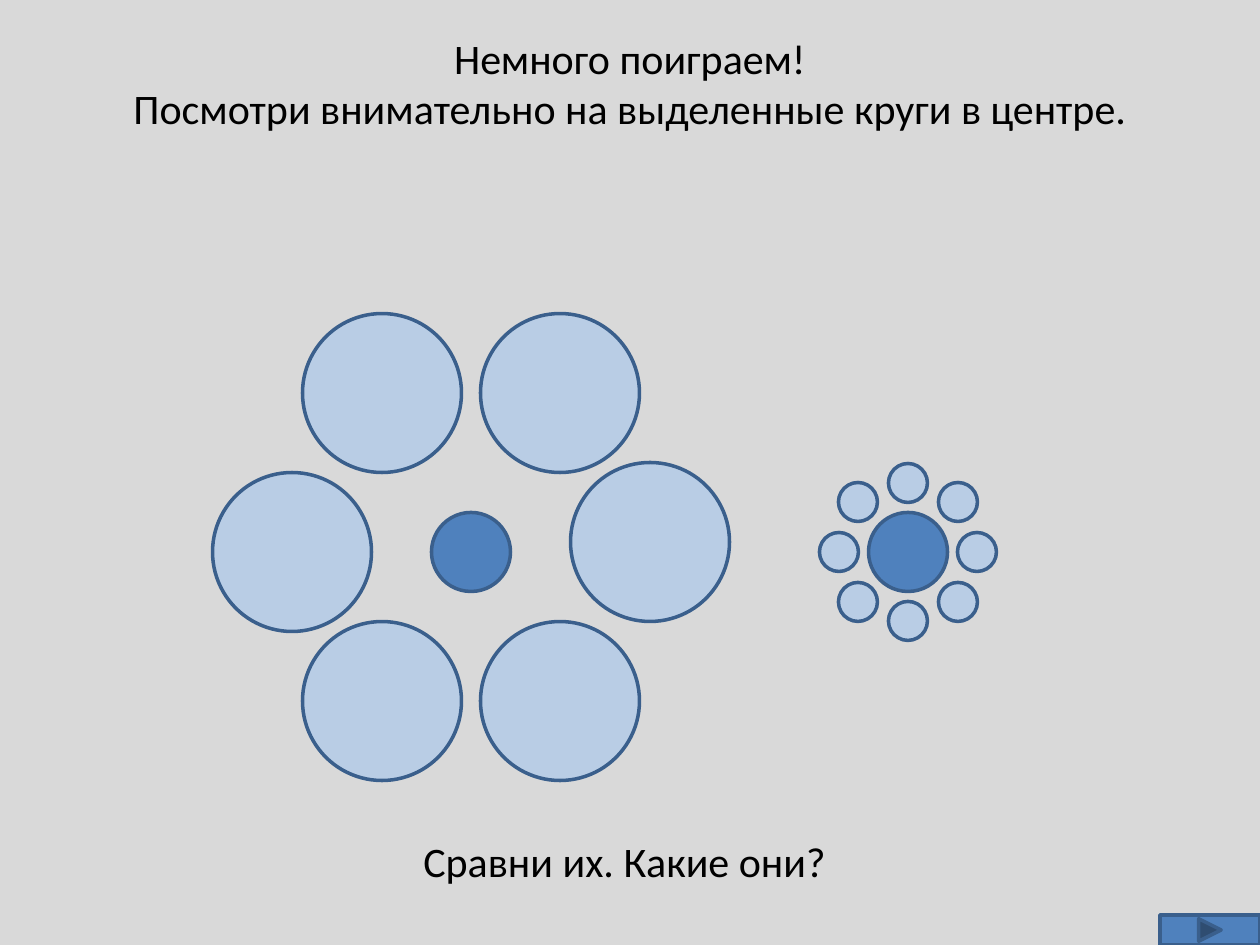
from pptx import Presentation
from pptx.dml.color import RGBColor
from pptx.enum.shapes import MSO_SHAPE
from pptx.enum.text import MSO_AUTO_SIZE, PP_ALIGN
from pptx.util import Pt

PX_PER_INCH = 126
OVAL = MSO_SHAPE.OVAL
NEXT_BUTTON = MSO_SHAPE.ACTION_BUTTON_FORWARD_OR_NEXT
CENTER = PP_ALIGN.CENTER
GROW = MSO_AUTO_SIZE.SHAPE_TO_FIT_TEXT

BACKGROUND = "D9D9D9"
PALE_BLUE = "B9CDE5"
BLUE = "4F81BD"
OUTLINE = "3A5F8C"
BLACK = "000000"

BIG, MIDDLE, SMALL = 159, 79, 39
LEFT_CENTER = (471, 552)
RIGHT_CENTER = (908, 552)
# Offsets of the surrounding circles from the middle of their group
BIG_RING = [(-89, -159), (89, -159), (-179, 0), (-89, 149), (89, 149), (179, -10)]
SMALL_RING = [(0, 69), (-50, 50), (69, 0), (50, 50),
              (-50, -50), (0, -69), (50, -50), (-69, 0)]


def px(length):
    return round(length * 914400 / PX_PER_INCH)


def color(value):
    return RGBColor.from_string(value)


def add_figure(page, kind, left, top, width, height, fill):
    figure = page.shapes.add_shape(kind, px(left), px(top), px(width), px(height))
    figure.shadow.inherit = False
    figure.fill.solid()
    figure.fill.fore_color.rgb = color(fill)
    figure.line.color.rgb = color(OUTLINE)
    figure.line.width = Pt(2)


def add_circle(page, center, diameter, fill):
    left, top = (middle - diameter / 2 for middle in center)
    add_figure(page, OVAL, left, top, diameter, diameter, fill)


def add_ring(page, center, offsets, diameter):
    """Surround a center with pale circles."""
    for across, down in offsets:
        add_circle(page, (center[0] + across, center[1] + down), diameter, PALE_BLUE)


def add_text(page, left, top, width, height, text):
    box = page.shapes.add_textbox(px(left), px(top), px(width), px(height))
    frame = box.text_frame
    frame.word_wrap = True
    frame.auto_size = GROW
    frame.text = text
    for para in frame.paragraphs:
        para.alignment = CENTER
        for span in para.runs:
            span.font.name = "Calibri"
            span.font.size = Pt(24)
            span.font.color.rgb = color(BLACK)


def main():
    deck = Presentation()
    deck.slide_width, deck.slide_height = px(1260), px(945)
    page = deck.slides.add_slide(deck.slide_layouts[6])
    page.background.fill.solid()
    page.background.fill.fore_color.rgb = color(BACKGROUND)

    add_ring(page, LEFT_CENTER, BIG_RING, BIG)
    for center in (LEFT_CENTER, RIGHT_CENTER):
        add_circle(page, center, MIDDLE, BLUE)
    add_ring(page, RIGHT_CENTER, SMALL_RING, SMALL)

    add_text(page, 74, 829, 1101, 63, "Сравни их. Какие они?")
    add_figure(page, NEXT_BUTTON, 1160, 915, 100, 30, BLUE)
    add_text(page, 64, 26, 1132, 115,
             "Немного поиграем!\nПосмотри внимательно на выделенные круги в центре.")
    deck.save("out.pptx")


if __name__ == "__main__":
    main()
